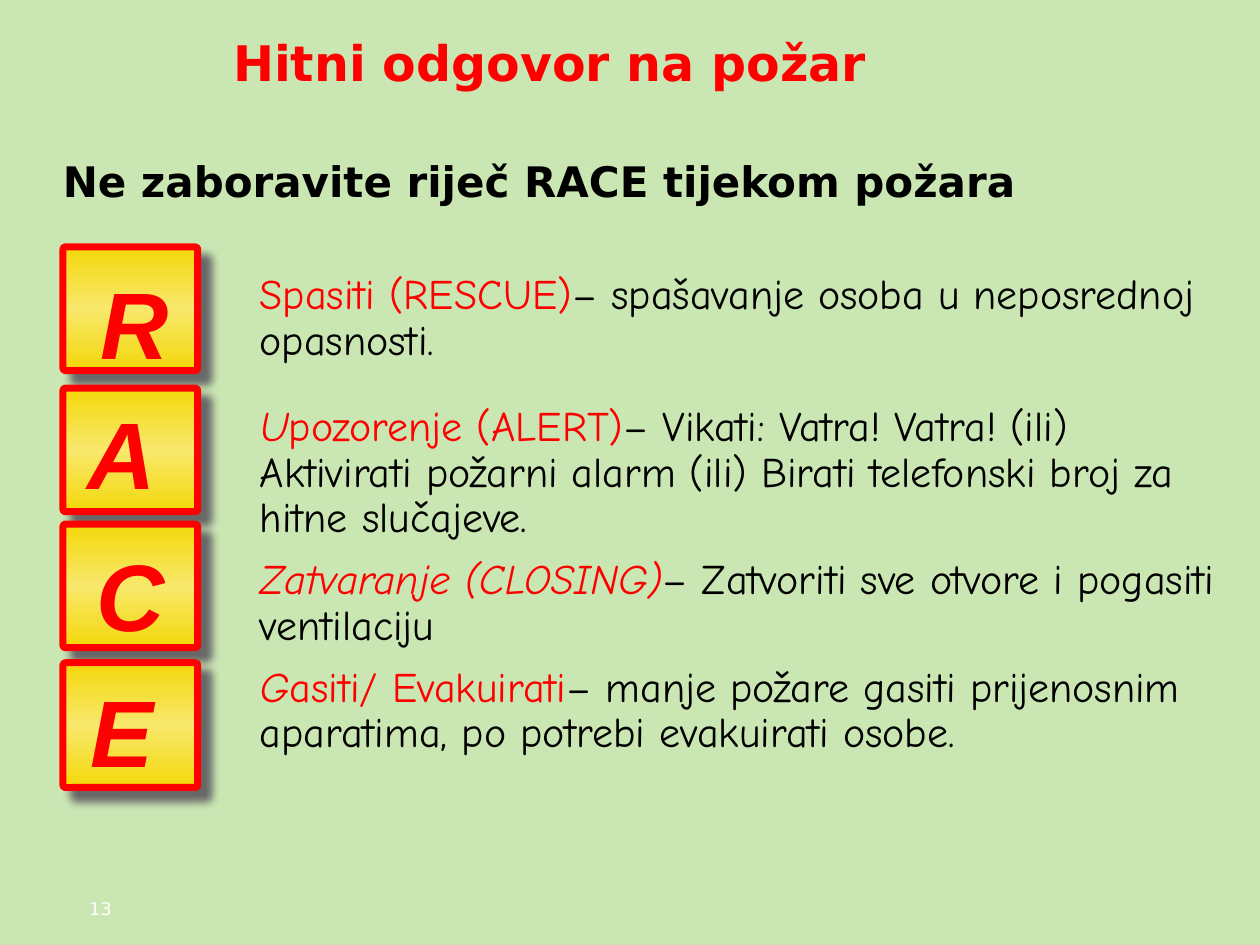
from lxml.etree import SubElement
from pptx import Presentation
from pptx.dml.color import RGBColor
from pptx.enum.shapes import MSO_SHAPE as Shape
from pptx.enum.text import MSO_ANCHOR as Anchor, MSO_AUTO_SIZE as AutoSize, PP_ALIGN as Align
from pptx.oxml.ns import qn
from pptx.util import Pt

RED, BLACK, WHITE = "FF0000", "000000", "FFFFFF"
GOLD, LIGHT_GOLD, GREY, GREEN = "F3D80A", "F8E86C", "696969", "CAE6B3"
SANS, HAND, LETTER = "DejaVu Sans", "Comic Neue", "Arial"
HANGING = 9.4

# Tile top and height, then letter and its left, top and width
TILES = [
    (141.1, 70.6, "R", 50.4, 143.3, 45.4),
    (221.8, 70.6, "A", 43.2, 217.4, 45.4),
    (299.5, 70.6, "C", 48.2, 298.8, 45.4),
    (378.7, 71.3, "E", 44.6, 376.6, 42.5),
]

# Space before, then runs of text, colour and italic
STEPS = [
    (0, [("Spasiti (RESCUE)", RED, False),
         ("– spašavanje osoba u neposrednoj opasnosti.", BLACK, False)]),
    (23.6, [("U", RED, True), ("pozorenje (ALERT)", RED, False),
            ("– Vikati: Vatra! Vatra! (ili) Aktivirati požarni alarm (ili) "
             "Birati telefonski broj za hitne slučajeve.", BLACK, False)]),
    (9.6, [("Zatvaranje (CLOSING)", RED, True),
           ("– Zatvoriti sve otvore i pogasiti ventilaciju", BLACK, False)]),
    (9.6, [("G", RED, True), ("asiti/ Evakuirati", RED, False),
           ("– manje požare gasiti prijenosnim aparatima, po potrebi "
            "evakuirati osobe.", BLACK, False)]),
]


def rgb(value):
    return RGBColor.from_string(value)


def style(r, font, size, color, bold=False, italic=False):
    f = r.font
    f.name, f.size, f.bold, f.italic = font, Pt(size), bold, italic
    f.color.rgb = rgb(color)


def set_frame(tf, insets, anchor=Anchor.TOP):
    tf.word_wrap = True
    tf.auto_size = AutoSize.NONE
    tf.vertical_anchor = anchor
    tf.margin_left, tf.margin_top, tf.margin_right, tf.margin_bottom = map(Pt, insets)


def set_paragraph(p, before=0):
    p.line_spacing = 0.9
    p.space_before = Pt(before)
    p._p.get_or_add_pPr().set("marL", str(Pt(HANGING)))


def add_text(shapes, box, text, insets, *look):
    s = shapes.add_textbox(*map(Pt, box))
    set_frame(s.text_frame, insets)
    p = s.text_frame.paragraphs[0]
    p.text = text
    style(p.runs[0], *look)
    return p


def add_title(slide, text):
    s = slide.shapes.title
    s.left, s.top, s.width, s.height = map(Pt, (126, 15.1, 445.7, 41))
    set_frame(s.text_frame, (7.2, 3.6, 7.2, 3.6), Anchor.MIDDLE)
    p = s.text_frame.paragraphs[0]
    p.text = text
    p.alignment = Align.LEFT
    style(p.runs[0], SANS, 28, RED, True)


def add_color(parent, value):
    SubElement(parent, qn("a:srgbClr"), val=value)


def add_tile(slide, top, height, letter, x, y, width):
    shapes = slide.shapes.add_group_shape().shapes
    s = shapes.add_shape(Shape.ROUNDED_RECTANGLE, *map(Pt, (36, top, 77, height)))
    s.adjustments[0] = 0.02
    s.line.color.rgb = rgb(RED)
    s.line.width = Pt(4)

    # Gold gradient, lightest in the middle
    s.fill.gradient()
    s.fill.gradient_angle = 90
    stops = s._element.spPr.find(".//" + qn("a:gsLst"))
    for stop in list(stops):
        stops.remove(stop)
    for pos, color in ((0, GOLD), (50, LIGHT_GOLD), (100, GOLD)):
        add_color(SubElement(stops, qn("a:gs"), pos=str(pos * 1000)), color)

    # Soft shadow to the lower right
    s.shadow.inherit = False
    effects = s._element.spPr.find(qn("a:effectLst"))
    add_color(SubElement(effects, qn("a:outerShdw"), blurRad=str(Pt(5)),
                         dist=str(Pt(8.5)), dir=str(45 * 60000),
                         algn="ctr", rotWithShape="0"), GREY)

    add_text(shapes, (x, y, width, 56.2), letter, (7.2, 8.1, 7.2, 3.6),
             LETTER, 54, RED, True, True)


def add_steps(slide):
    s = slide.shapes.add_textbox(*map(Pt, (139, 156.4, 561.6, 311)))
    tf = s.text_frame
    set_frame(tf, (0, 0, 0, 0))
    for i, (before, runs) in enumerate(STEPS):
        p = tf.add_paragraph() if i else tf.paragraphs[0]
        set_paragraph(p, before)
        for text, color, italic in runs:
            r = p.add_run()
            r.text = text
            style(r, HAND, 24, color, italic=italic)


def main():
    prs = Presentation()
    prs.slide_width, prs.slide_height = Pt(720), Pt(540)
    slide = prs.slides.add_slide(prs.slide_layouts[5])
    slide.background.fill.solid()
    slide.background.fill.fore_color.rgb = rgb(GREEN)

    # Slide number, heading and explanations
    add_text(slide.shapes, (51.1, 513.4, 149.8, 21.6), "13", (0, 0, 0, 0), SANS, 10, WHITE)
    add_title(slide, "Hitni odgovor na požar")
    add_steps(slide)

    # Letter tiles
    for tile in TILES:
        add_tile(slide, *tile)

    # Lead sentence
    p = add_text(slide.shapes, (19.4, 88.6, 672.5, 33.1),
                 "Ne zaboravite riječ RACE tijekom požara",
                 (7.2, 3.6, 7.2, 3.6), SANS, 24, BLACK, True)
    set_paragraph(p)

    prs.save("out.pptx")


if __name__ == "__main__":
    main()
